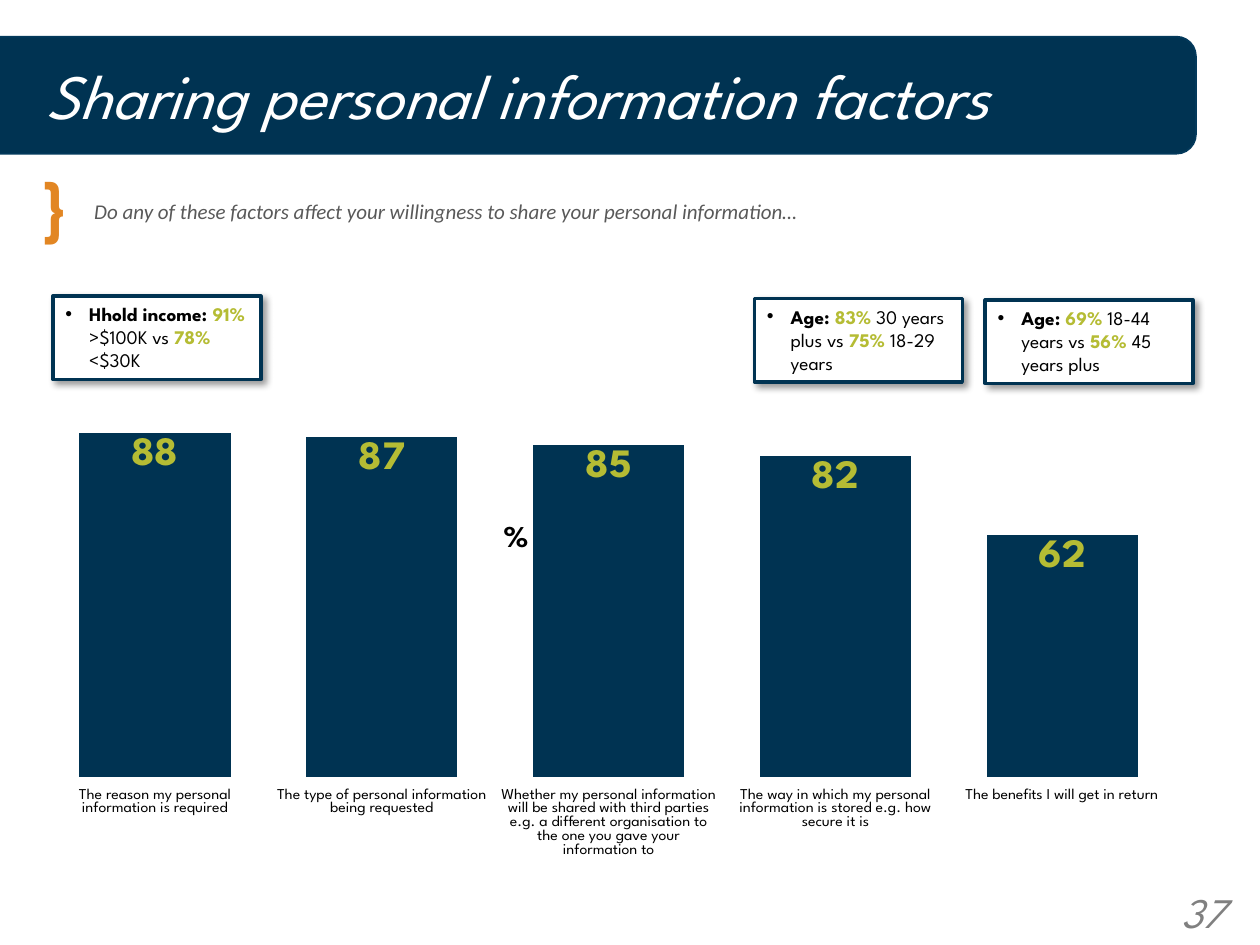
"""Build the slide on factors in sharing personal information."""
import pptx
import pptx.chart.data
import pptx.dml.color
import pptx.enum.chart
import pptx.enum.shapes
import pptx.enum.text
import pptx.oxml
import pptx.oxml.ns
import pptx.util
from pptx.util import Cm

NAVY, LIME, BLACK, WHITE = "003352", "B5BC34", "000000", "FFFFFF"
HEADING_FONT = "League Spartan"
ALIGN = pptx.enum.text.PP_ALIGN
ANCHOR = pptx.enum.text.MSO_ANCHOR
SHAPE = pptx.enum.shapes.MSO_SHAPE

FACTORS = {
    "The reason my personal information is required": 88,
    "The type of personal information being requested": 87,
    "Whether my personal information will be shared with third parties e.g. "
    "a different organisation to the one you gave your information to": 85,
    "The way in which my personal information is stored e.g. how secure it is": 82,
    "The benefits I will get in return": 62,
}
CALLOUTS = [
    (1.07, 5.97, ["Hhold income: ", "91% ", ">$100K vs ", "78% ", "<$30K"]),
    (15.21, 6.02, ["Age: ", "83%", " 30 years plus vs ", "75% ", "18-29 years"]),
    (19.86, 6.05, ["Age: ", "69%", " 18-44 years vs ", "56% ", "45 years plus"]),
]
CALLOUT_STYLES = [(BLACK, True), (LIME, True), (BLACK, False), (LIME, True), (BLACK, False)]


def rgb(value):
    return pptx.dml.color.RGBColor.from_string(value)


def xml(tag, attributes="", children=""):
    namespaces = pptx.oxml.ns.nsdecls("a", "c")
    return pptx.oxml.parse_xml(f"<{tag} {namespaces} {attributes}>{children}</{tag}>")


def style_font(font, size, color, name=HEADING_FONT, bold=False, italic=False):
    font.size, font.name = pptx.util.Pt(size), name
    font.bold, font.italic = bold, italic
    font.color.rgb = rgb(color)


def add_run(paragraph, text, size, color, **style):
    run = paragraph.add_run()
    run.text = text
    style_font(run.font, size, color, **style)


def add_text(slide, box, text, size, color, anchor=ANCHOR.TOP, align=ALIGN.LEFT,
             inset=True, **style):
    frame = slide.shapes.add_textbox(*map(Cm, box)).text_frame
    frame.word_wrap = True
    frame.vertical_anchor = anchor
    if not inset:
        frame.margin_left = frame.margin_right = frame.margin_top = frame.margin_bottom = 0
    paragraph = frame.paragraphs[0]
    paragraph.alignment = align
    add_run(paragraph, text, size, color, **style)


def add_panel(slide, preset, box, fill, line, weight):
    panel = slide.shapes.add_shape(preset, *map(Cm, box))
    panel.shadow.inherit = False
    panel.fill.solid()
    panel.fill.fore_color.rgb = rgb(fill)
    panel.line.color.rgb = rgb(line)
    panel.line.width = pptx.util.Pt(weight)
    return panel


def add_callout(slide, left, top, parts):
    callout = add_panel(slide, SHAPE.RECTANGLE, (left, top, 4.19, 1.68), WHITE, NAVY, 2)
    effects = callout._element.spPr.find(pptx.oxml.ns.qn("a:effectLst"))
    effects.append(xml(
        "a:outerShdw", 'blurRad="50800" dist="38100" dir="2700000" algn="tl" rotWithShape="0"',
        f'<a:srgbClr val="{BLACK}"><a:alpha val="40000"/></a:srgbClr>'))
    frame = callout.text_frame
    frame.word_wrap = True
    frame.vertical_anchor = ANCHOR.TOP
    paragraph = frame.paragraphs[0]
    paragraph.alignment = ALIGN.LEFT
    properties = paragraph._p.get_or_add_pPr()
    properties.set("marL", str(int(Cm(0.48))))
    properties.set("indent", str(-int(Cm(0.48))))
    properties.append(xml("a:buFont", 'typeface="Arial"'))
    properties.append(xml("a:buChar", 'char="•"'))
    for text, (color, bold) in zip(parts, CALLOUT_STYLES):
        add_run(paragraph, text, 11, color, bold=bold)


def manual_layout(**fractions):
    children = '<c:layoutTarget val="inner"/>' if "w" in fractions else ""
    children += '<c:xMode val="edge"/><c:yMode val="edge"/>'
    children += "".join(f'<c:{key} val="{value}"/>' for key, value in fractions.items())
    return xml("c:layout", "", f"<c:manualLayout>{children}</c:manualLayout>")


def place(element, layout):
    for old in element.findall(pptx.oxml.ns.qn("c:layout")):
        element.remove(old)
    text = element.find(pptx.oxml.ns.qn("c:tx"))
    element.insert(0 if text is None else 1, layout)


def add_factor_chart(slide):
    factors = pptx.chart.data.CategoryChartData(number_format="0")
    factors.categories = list(FACTORS)
    factors.add_series("Series 1", list(FACTORS.values()))
    chart = slide.shapes.add_chart(
        pptx.enum.chart.XL_CHART_TYPE.COLUMN_CLUSTERED,
        *map(Cm, (0.84, 5.41, 23.57, 11.89)), factors).chart
    chart.has_legend = False
    style_font(chart.font, 18, BLACK)

    chart.has_title = True
    add_run(chart.chart_title.text_frame.paragraphs[0], "%", 18, BLACK, bold=True)
    place(chart.chart_title._element, manual_layout(x=0.39, y=0.44))

    percent_axis = chart.value_axis
    percent_axis.visible = False
    percent_axis.has_major_gridlines = False
    percent_axis.minimum_scale, percent_axis.maximum_scale = 0, 120
    percent_axis.major_unit = 0.2
    factor_axis = chart.category_axis
    factor_axis.format.line.fill.background()
    style_font(factor_axis.tick_labels.font, 9, BLACK)

    plot = chart.plots[0]
    plot.gap_width = 50
    plot.vary_by_categories = False
    bars = plot.series[0]
    bars.format.fill.solid()
    bars.format.fill.fore_color.rgb = rgb(NAVY)
    labels = bars.data_labels
    labels.show_value = True
    labels.position = pptx.enum.chart.XL_LABEL_POSITION.INSIDE_END
    labels.number_format, labels.number_format_is_linked = "#,##0", False
    style_font(labels.font, 24, LIME, bold=True)
    plot_area = chart._chartSpace.chart.plotArea
    place(plot_area, manual_layout(x=0, y=0.07, w=0.97, h=0.83))


def main():
    deck = pptx.Presentation()
    deck.slide_width, deck.slide_height = Cm(25.4), Cm(19.05)
    slide = deck.slides.add_slide(deck.slide_layouts[6])
    add_panel(slide, SHAPE.ROUNDED_RECTANGLE, (-0.91, 0.74, 25.02, 2.36), NAVY, "03395B", 1)
    add_text(slide, (0.84, 3.23, 0.69, 1.7), "}", 40, "E28623", inset=False, bold=True)
    add_text(slide, (1.65, 3.53, 20.93, 1.45),
             "Do any of these factors affect your willingness to share your personal information…",
             12, "595959", anchor=ANCHOR.MIDDLE, name="Calibri", italic=True)
    add_text(slide, (0.69, 0.69, 22.86, 2.41), "Sharing personal information factors",
             36, WHITE, anchor=ANCHOR.MIDDLE, italic=True)
    add_text(slide, (19.02, 17.75, 5.92, 1.02), "37", 24, "808080",
             align=ALIGN.RIGHT, italic=True)
    add_factor_chart(slide)
    for left, top, parts in CALLOUTS:
        add_callout(slide, left, top, parts)
    deck.save("out.pptx")


if __name__ == "__main__":
    main()
